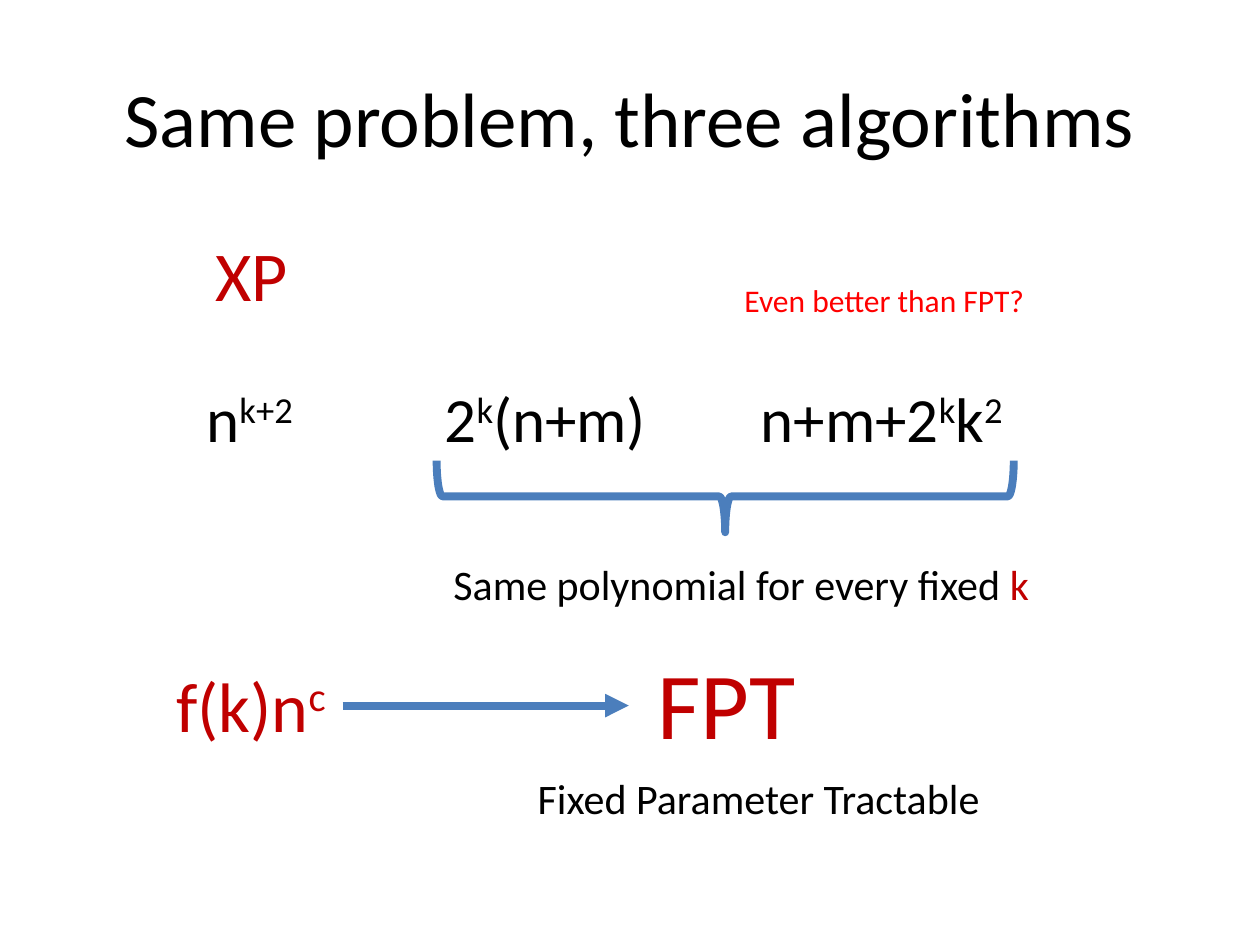
from dataclasses import dataclass

from lxml import etree
from pptx import Presentation
from pptx.dml.color import RGBColor
from pptx.enum import shapes, text
from pptx.oxml.ns import qn
from pptx.util import Pt


@dataclass(frozen=True)
class Theme:
    font: str = "Calibri"
    ink: str = "000000"
    accent: str = "C00000"
    alert: str = "FF0000"
    line: str = "4B7EBC"
    paper: str = "FFFFFF"
    title: float = 44
    hero: float = 54
    term: float = 40
    formula: float = 36
    label: float = 24
    remark: float = 18
    stroke: float = 4.5


class SlideBuilder:
    def __init__(self, page, theme):
        self.page = page
        self.theme = theme
        page.background.fill.solid()
        page.background.fill.fore_color.rgb = RGBColor.from_string(theme.paper)

    def style(self, span, size, color):
        span.font.name = self.theme.font
        span.font.size = Pt(size)
        span.font.color.rgb = RGBColor.from_string(color)

    def stroke(self, shape):
        shape.line.color.rgb = RGBColor.from_string(self.theme.line)
        shape.line.width = Pt(self.theme.stroke)

    def title(self, wording, left, top, width, height):
        box = self.page.shapes.title
        box.left, box.top, box.width, box.height = map(Pt, (left, top, width, height))
        frame = box.text_frame
        frame.text = wording
        frame.vertical_anchor = text.MSO_ANCHOR.MIDDLE
        para = frame.paragraphs[0]
        para.alignment = text.PP_ALIGN.CENTER
        self.style(para.runs[0], self.theme.title, self.theme.ink)

    def text(self, pieces, left, top, width, height, size, color, marked=None):
        """Every second piece is raised, or takes the marked colour if one is given."""
        box = self.page.shapes.add_textbox(*map(Pt, (left, top, width, height)))
        frame = box.text_frame
        frame.word_wrap = False
        frame.auto_size = text.MSO_AUTO_SIZE.SHAPE_TO_FIT_TEXT
        for index, piece in enumerate(pieces):
            span = frame.paragraphs[0].add_run()
            span.text = piece
            special = index % 2 == 1
            self.style(span, size, marked if special and marked else color)
            if special and not marked:
                span._r.get_or_add_rPr().set("baseline", "30000")

    def brace_below(self, left, top, width, height):
        """A right brace turned a quarter, given by the area it covers."""
        middle_x, middle_y = left + width / 2, top + height / 2
        brace = self.page.shapes.add_shape(
            shapes.MSO_SHAPE.RIGHT_BRACE,
            Pt(middle_x - height / 2), Pt(middle_y - width / 2), Pt(height), Pt(width))
        brace.rotation = 90
        brace.shadow.inherit = False
        brace.fill.background()
        self.stroke(brace)

    def arrow(self, left, right, y):
        arrow = self.page.shapes.add_connector(
            shapes.MSO_CONNECTOR.STRAIGHT, Pt(left), Pt(y), Pt(right), Pt(y))
        self.stroke(arrow)
        etree.SubElement(arrow.line._get_or_add_ln(), qn("a:tailEnd"), type="triangle")
        etree.SubElement(arrow._element.spPr, qn("a:effectLst"))


def main():
    deck = Presentation()
    deck.slide_width, deck.slide_height = Pt(720), Pt(540)
    theme = Theme()
    slide = SlideBuilder(deck.slides.add_slide(deck.slide_layouts[5]), theme)

    slide.title("Same problem, three algorithms", 36, 21.6, 648, 90)

    running_times = [
        (("n", "k+2"), 110.9, 69.1),
        (("2", "k", "(n+m)"), 247, 131.8),
        (("n+m+2", "k", "k", "2"), 427.7, 157),
    ]
    for pieces, left, width in running_times:
        slide.text(pieces, left, 213.1, width, 51.1, theme.formula, theme.ink)

    slide.text(["XP"], 115.9, 128.9, 56.2, 55.4, theme.term, theme.accent)
    slide.brace_below(249.5, 263.2, 329.8, 41)
    slide.text(["Same polynomial for every fixed ", "k"], 252, 315.4, 346.3, 36,
               theme.label, theme.ink, marked=theme.accent)
    slide.text(["Fixed Parameter Tractable"], 300.2, 437.8, 269.3, 36, theme.label, theme.ink)
    slide.text(["FPT"], 368.6, 365, 94.3, 72.7, theme.hero, theme.accent)
    slide.text(["f(k)n", "c"], 93.6, 375.1, 102.2, 55.4, theme.term, theme.accent)
    slide.arrow(195.8, 359.3, 403.2)
    slide.text(["Even better than FPT?"], 418.3, 157, 176.4, 28.8, theme.remark, theme.alert)

    deck.save("out.pptx")


if __name__ == "__main__":
    main()
